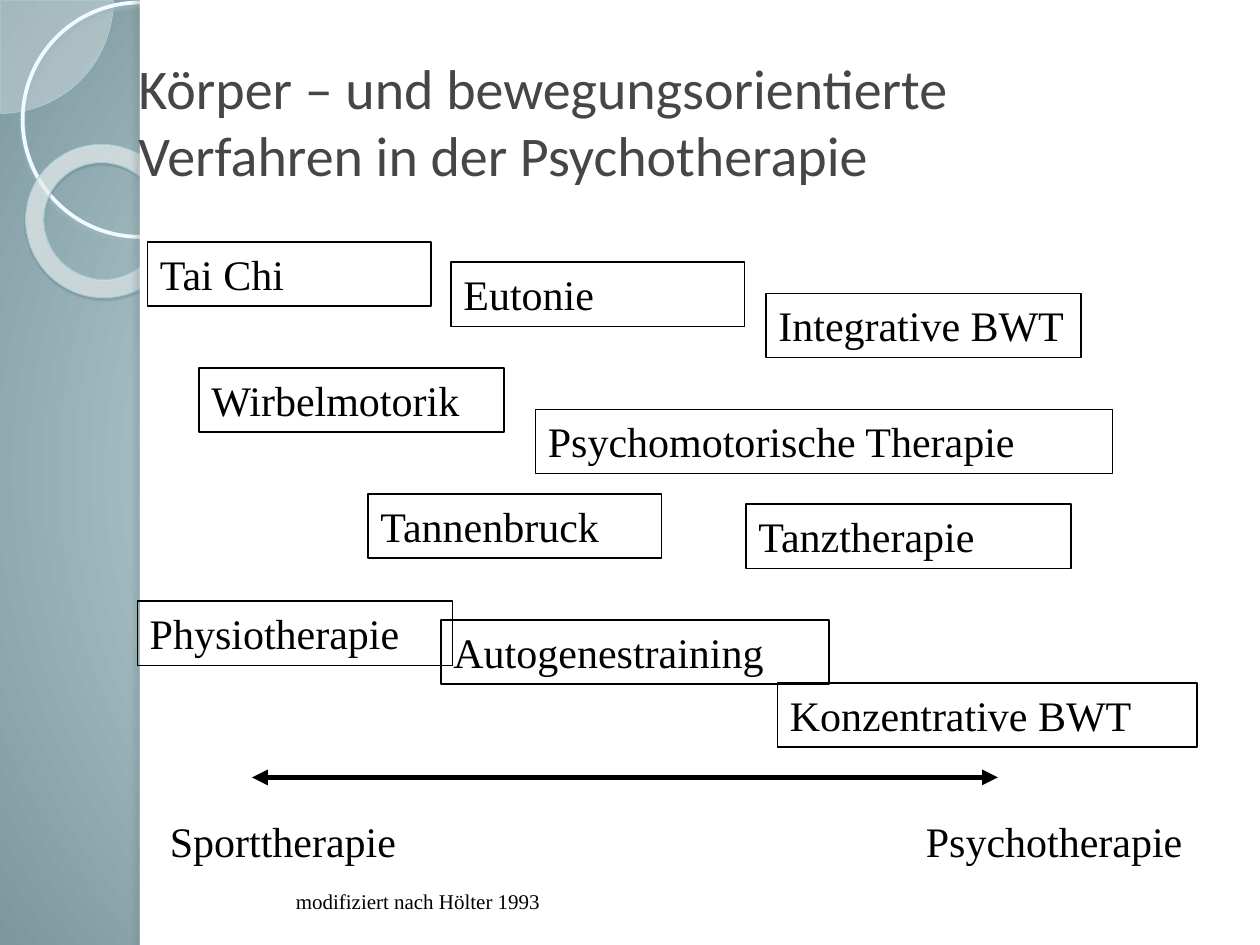
from lxml import etree
from pptx import Presentation
from pptx.dml.color import RGBColor
from pptx.enum.shapes import MSO_CONNECTOR, MSO_SHAPE
from pptx.enum.text import MSO_ANCHOR, PP_ALIGN
from pptx.oxml.ns import qn
from pptx.util import Inches, Pt

RECT = MSO_SHAPE.RECTANGLE
OVAL = MSO_SHAPE.OVAL
DONUT = MSO_SHAPE.DONUT
PIE = MSO_SHAPE.PIE
LINE = MSO_CONNECTOR.STRAIGHT
TOP, MID = MSO_ANCHOR.TOP, MSO_ANCHOR.MIDDLE
LEFT = PP_ALIGN.LEFT
SERIF, SANS = "Times New Roman", "Calibri"
COLORS = {
    "black": "000000", "white": "FFFFFF", "title": "464646",
    "mist": "E1FAFF", "slate": "7B969C",
    "pie": "F9FEFF", "rim": "B2DAE2", "ring": "EFFCFF",
    "glow": "9FB9BE", "pale": "FDFFFF", "ice": "A3EEFE",
    "edge": "A4CDD6", "dark": "4C5D61", "shade": "6E7A7D",
}
METHODS = [
    ("Tai Chi", 0.17, 0, 2.25),
    ("Eutonie", 2.58, 0.16, 2.33),
    ("Integrative BWT", 5.08, 0.41, 2.5),
    ("Wirbelmotorik", 0.58, 1, 2.42),
    ("Psychomotorische Therapie", 3.25, 1.33, 4.58),
    ("Tannenbruck", 1.92, 2, 2.33),
    ("Tanztherapie", 4.92, 2.08, 2.58),
    ("Physiotherapie", 0.09, 2.85, 2.5),
    ("Autogenestraining", 2.5, 3, 3.08),
    ("Konzentrative BWT", 5.17, 3.5, 3.33),
]


def rgb(name):
    return RGBColor.from_string(COLORS[name])


def add(node, tag, **attrs):
    return etree.SubElement(node, qn(tag), {k: str(v) for k, v in attrs.items()})


def tint(node, name, alpha):
    color = add(node, "a:srgbClr", val=COLORS[name])
    if alpha < 100:
        add(color, "a:alpha", val=alpha * 1000)


def blend(fill, root, stops, focus):
    fill.gradient()
    grad = next(root.iter(qn("a:gradFill")))
    for child in list(grad):
        grad.remove(child)
    group = add(grad, "a:gsLst")
    for place, name, alpha in stops:
        tint(add(group, "a:gs", pos=place * 1000), name, alpha)
    route = add(grad, "a:path", path="circle")
    add(route, "a:fillToRect", **{k: v * 1000 for k, v in zip("ltrb", focus)})


def shadow(shape, name, alpha, blur, dist, angle):
    effects = shape._element.spPr.find(qn("a:effectLst"))
    cast = add(effects, "a:outerShdw", blurRad=Pt(blur), dist=Pt(dist),
               dir=angle * 60000, algn="tl", rotWithShape=0)
    tint(cast, name, alpha)


def form(slide, kind, box, fill=None, alpha=100, line=None, width=0.75):
    shape = slide.shapes.add_shape(kind, *map(Inches, box))
    shape.shadow.inherit = False
    if fill:
        shape.fill.solid()
        shape.fill.fore_color.rgb = rgb(fill)
        if alpha < 100:
            color = next(shape._element.spPr.iter(qn("a:srgbClr")))
            add(color, "a:alpha", val=alpha * 1000)
    else:
        shape.fill.background()
    if line:
        shape.line.color.rgb = rgb(line)
        shape.line.width = Pt(width)
    else:
        shape.line.fill.background()
    return shape


def write(slide, text, box, size=24, font=SERIF, color="black", anchor=TOP, frame=False):
    if frame:
        shape = form(slide, RECT, box, line="black")
    else:
        shape = slide.shapes.add_textbox(*map(Inches, box))
    body = shape.text_frame
    body.word_wrap = True
    body.vertical_anchor = anchor
    para = body.paragraphs[0]
    para.alignment = LEFT
    run = para.add_run()
    run.text = text
    run.font.size = Pt(size)
    run.font.name = font
    run.font.color.rgb = rgb(color)


def arrow(slide, start, end, y):
    line = slide.shapes.add_connector(LINE, *map(Inches, (start, y, end, y)))
    line.line.color.rgb = rgb("black")
    line.line.width = Pt(3)
    stroke = line._element.spPr.find(qn("a:ln"))
    for tag in ("a:headEnd", "a:tailEnd"):
        add(stroke, tag, type="triangle")
    add(line._element.spPr, "a:effectLst")


def border(slide, x, y, w, h):
    blend(slide.background.fill, slide._element,
          [(0, "mist", 100), (100, "slate", 100)], (50, 50, 50, 50))
    pie = form(slide, PIE, (x - 0.89, y - 0.89, 1.79, 1.79), "pie", 33, "rim", 0.25)
    pie.adjustments[0], pie.adjustments[1] = 0, 54
    ring = form(slide, OVAL, (x + 0.18, y + 0.02, 1.86, 1.86), line="ring", width=2.15)
    shadow(ring, "glow", 85, 2, 2, 90)
    donut = form(slide, DONUT, (x + 0.2, y + 1.15, 1.23, 1.21), line="edge", width=0.58)
    donut.rotation = 38.6
    donut.adjustments[0] = 0.12
    blend(donut.fill, donut._element,
          [(0, "pie", 70), (70, "pale", 55), (100, "ice", 60)], (-408, -50, 508, 150))
    shadow(donut, "dark", 35, 1, 1.2, 75)
    form(slide, RECT, (x + w, y, 10 - w, h), "white")
    strip = form(slide, RECT, (x + w, y, 0.08, h), "white")
    shadow(strip, "shade", 25, 3, 3, 180)


def cloud(slide, x, y):
    for text, left, top, width in METHODS:
        write(slide, text, (x + left, y + top, width, 0.51), frame=True)


def scale(slide, x, y, w):
    arrow(slide, x + 0.75, x + 6.67, y)
    for text, left in (("Sporttherapie", x), ("Psychotherapie", x + w - 2.5)):
        write(slide, text, (left, y + 0.25, 2.5, 0.5))
    write(slide, "modifiziert nach Hölter 1993", (x + 1, y + 0.83, 4.67, 0.3), size=12)


def main():
    deck = Presentation()
    deck.slide_width, deck.slide_height = Inches(10), Inches(7.5)
    slide = deck.slides.add_slide(deck.slide_layouts[6])
    border(slide, 0, 0, 1.11, 7.5)
    write(slide, "Körper – und bewegungsorientierte Verfahren in der Psychotherapie",
          (1, 0.33, 8.5, 1.25), size=32, font=SANS, color="title", anchor=MID)
    cloud(slide, 1, 1.92)
    scale(slide, 1.25, 6.17, 8.5)
    deck.save("out.pptx")


if __name__ == "__main__":
    main()
